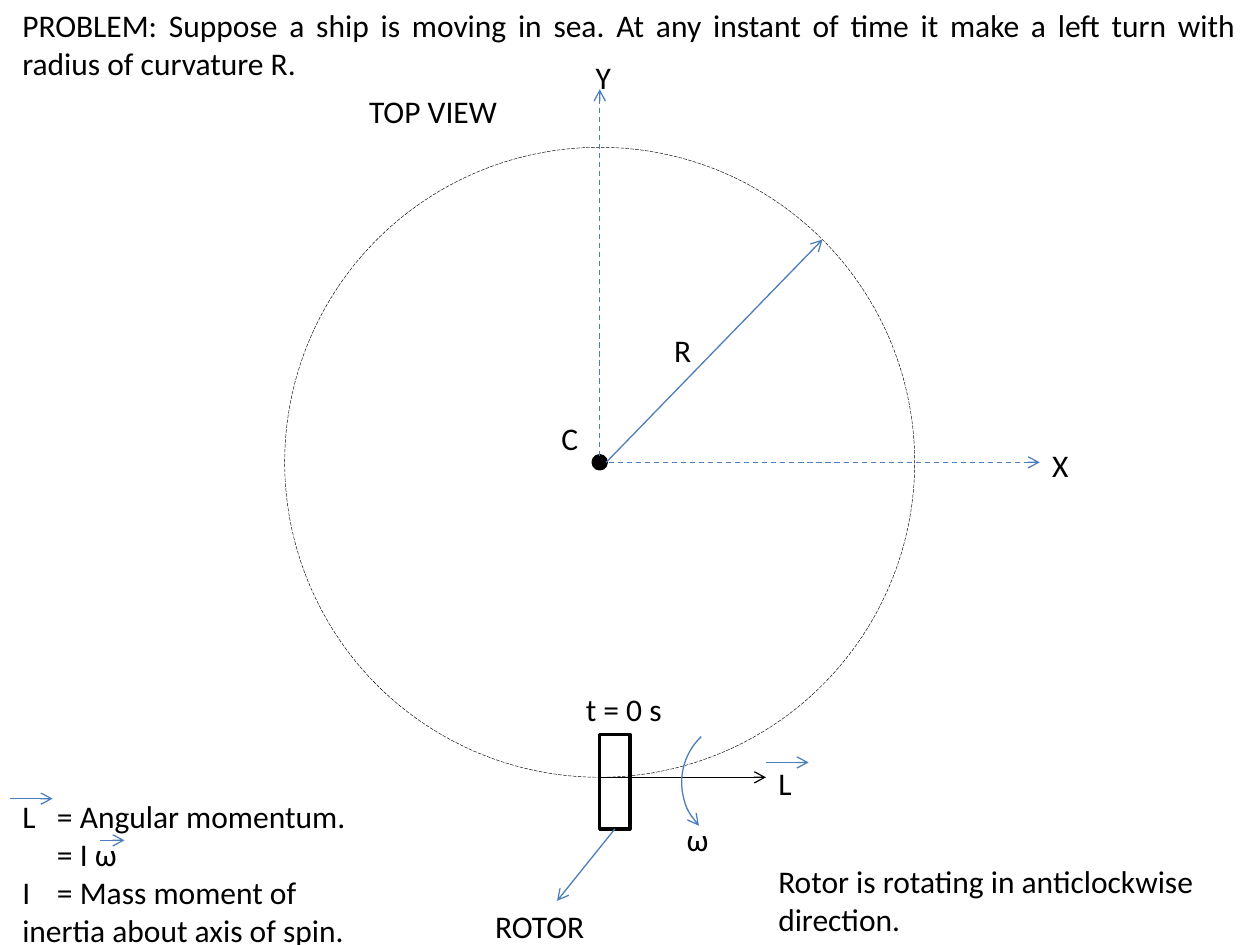
from math import cos, pi

from lxml import etree
from pptx import Presentation
from pptx.dml.color import RGBColor
from pptx.enum.dml import MSO_LINE
from pptx.enum.shapes import MSO_CONNECTOR, MSO_SHAPE
from pptx.enum.text import MSO_AUTO_SIZE, PP_ALIGN
from pptx.oxml.ns import qn
from pptx.util import Cm, Pt

STRAIGHT = MSO_CONNECTOR.STRAIGHT
OVAL, RECTANGLE, ARC = MSO_SHAPE.OVAL, MSO_SHAPE.RECTANGLE, MSO_SHAPE.ARC
DASH, LONG_DASH = MSO_LINE.DASH, MSO_LINE.LONG_DASH
LEFT, JUSTIFY = PP_ALIGN.LEFT, PP_ALIGN.JUSTIFY
GROW = MSO_AUTO_SIZE.SHAPE_TO_FIT_TEXT
BOTTOM_SITE, TOP_SITE = 2, 0

THEME = {
    "font": "Calibri",
    "size": Pt(18),
    "ink": RGBColor(0x00, 0x00, 0x00),
    "arrow": RGBColor(0x4B, 0x7E, 0xBC),
    "hairline": Pt(0.25),
    "thin": Pt(0.75),
    "thick": Pt(2),
}

CENTER_X, CENTER_Y = 12.09, 9.32
RADIUS, DOT_RADIUS = 6.35, 0.13
ROTOR = (CENTER_X, 14.81, 0.61, 1.9)
SPIN_ARC = (13.74, 14.5, 2.54, 2.54)
SPIN_ANGLE = 226.5
SPIN_Y = CENTER_Y + RADIUS
SPIN_END = 15.44
LINE_HEIGHT, BOX_PADDING = 0.77, 0.26
TAB_STOP = 0.7

PROBLEM = (
    "PROBLEM: Suppose a ship is moving in sea. At any instant of time "
    "it make a left turn with radius of curvature R."
)
LABELS = [
    (PROBLEM, 0.2, 0, 24.97, 2, JUSTIFY),
    ("TOP VIEW", 7.19, 1.73, 3.28, 1, LEFT),
    ("Y", 11.76, 1.04, 3.28, 1, LEFT),
    ("X", 20.96, 8.86, 3.28, 1, LEFT),
    ("C", 11.07, 8.33, 0.86, 1, LEFT),
    ("R", 13.34, 6.55, 1.04, 1, LEFT),
    ("t = 0 s", 11.56, 13.79, 2.31, 1, LEFT),
    ("L", SPIN_END, 15.27, 1.04, 1, LEFT),
    ("ω", 13.59, 16.41, 1.04, 1, LEFT),
    ("ROTOR", 9.73, 18.16, 2.67, 1, LEFT),
    ("Rotor is rotating in anticlockwise direction.", SPIN_END, 17.25, 9.98, 2, LEFT),
]
LEGEND = [
    "L\t= Angular momentum.",
    "= I ω",
    "I\t= Mass moment of inertia about axis of spin.",
]
VECTOR_MARKS = [(SPIN_END, 15.37, 0.86), (0.2, 16.1, 0.86), (2.01, 16.94, 0.5)]


def add_arrowhead(line, end):
    etree.SubElement(line._get_or_add_ln(), qn(f"a:{end}"), type="arrow")


def draw_arrow(slide, start, finish, color, dash=None):
    arrow = slide.shapes.add_connector(
        STRAIGHT, *(Cm(value) for value in (*start, *finish))
    )
    arrow.line.color.rgb = color
    arrow.line.width = THEME["thin"]
    if dash:
        arrow.line.dash_style = dash
    add_arrowhead(arrow.line, "tailEnd")
    etree.SubElement(arrow._element.spPr, qn("a:effectLst"))
    return arrow


def draw_shape(slide, kind, place, color, width, fill=None):
    shape = slide.shapes.add_shape(kind, *(Cm(value) for value in place))
    shape.shadow.inherit = False
    if fill is None:
        shape.fill.background()
    else:
        shape.fill.solid()
        shape.fill.fore_color.rgb = fill
    shape.line.color.rgb = color
    shape.line.width = width
    return shape


def draw_circle(slide, radius, width, fill=None):
    place = (CENTER_X - radius, CENTER_Y - radius, 2 * radius, 2 * radius)
    return draw_shape(slide, OVAL, place, THEME["ink"], width, fill)


def write(slide, text, left, top, width, lines, align):
    height = lines * LINE_HEIGHT + BOX_PADDING
    box = slide.shapes.add_textbox(Cm(left), Cm(top), Cm(width), Cm(height))
    frame = box.text_frame
    frame.word_wrap = True
    frame.auto_size = GROW
    frame.text = text
    for para in frame.paragraphs:
        para.alignment = align
        for span in para.runs:
            span.font.name = THEME["font"]
            span.font.size = THEME["size"]
            span.font.color.rgb = THEME["ink"]
    return box


def write_legend(slide):
    box = write(slide, "\n".join(LEGEND), 0.2, 15.95, 7.62, 4, LEFT)
    for para in box.text_frame.paragraphs:
        properties = para._p.get_or_add_pPr()
        if "\t" in para.text:
            tabs = etree.SubElement(properties, qn("a:tabLst"))
            etree.SubElement(tabs, qn("a:tab"), pos=str(Cm(TAB_STOP)), algn="l")
        else:
            properties.set("marL", str(Cm(TAB_STOP)))
            properties.set("indent", "0")


def draw_diagram(slide):
    ink, blue = THEME["ink"], THEME["arrow"]
    path_circle = draw_circle(slide, RADIUS, THEME["hairline"])
    path_circle.line.dash_style = LONG_DASH

    rotor = draw_shape(slide, RECTANGLE, ROTOR, ink, THEME["thick"])
    draw_arrow(slide, (CENTER_X, SPIN_Y), (SPIN_END, SPIN_Y), ink)
    spin = draw_shape(slide, ARC, SPIN_ARC, blue, THEME["thin"])
    spin.rotation = SPIN_ANGLE
    add_arrowhead(spin.line, "headEnd")
    pointer = draw_arrow(slide, (12.4, 16.71), (11.23, 18.16), blue)
    pointer.begin_connect(rotor, BOTTOM_SITE)

    draw_arrow(slide, (CENTER_X, CENTER_Y), (20.96, CENTER_Y), blue, DASH)
    dot = draw_circle(slide, DOT_RADIUS, THEME["thick"], ink)
    dot_top = (CENTER_X, CENTER_Y - DOT_RADIUS)
    vertical_axis = draw_arrow(slide, dot_top, (CENTER_X, 1.8), blue, DASH)
    vertical_axis.begin_connect(dot, TOP_SITE)
    reach = RADIUS * cos(pi / 4)
    rim = (CENTER_X + reach, CENTER_Y - reach)
    draw_arrow(slide, (CENTER_X + DOT_RADIUS, CENTER_Y), rim, blue)

    for left, top, length in VECTOR_MARKS:
        draw_arrow(slide, (left, top), (left + length, top), blue)


def main():
    deck = Presentation()
    deck.slide_width, deck.slide_height = Cm(25.4), Cm(19.05)
    page = deck.slides.add_slide(deck.slide_layouts[6])
    draw_diagram(page)
    for label in LABELS:
        write(page, *label)
    write_legend(page)
    deck.save("out.pptx")


if __name__ == "__main__":
    main()
